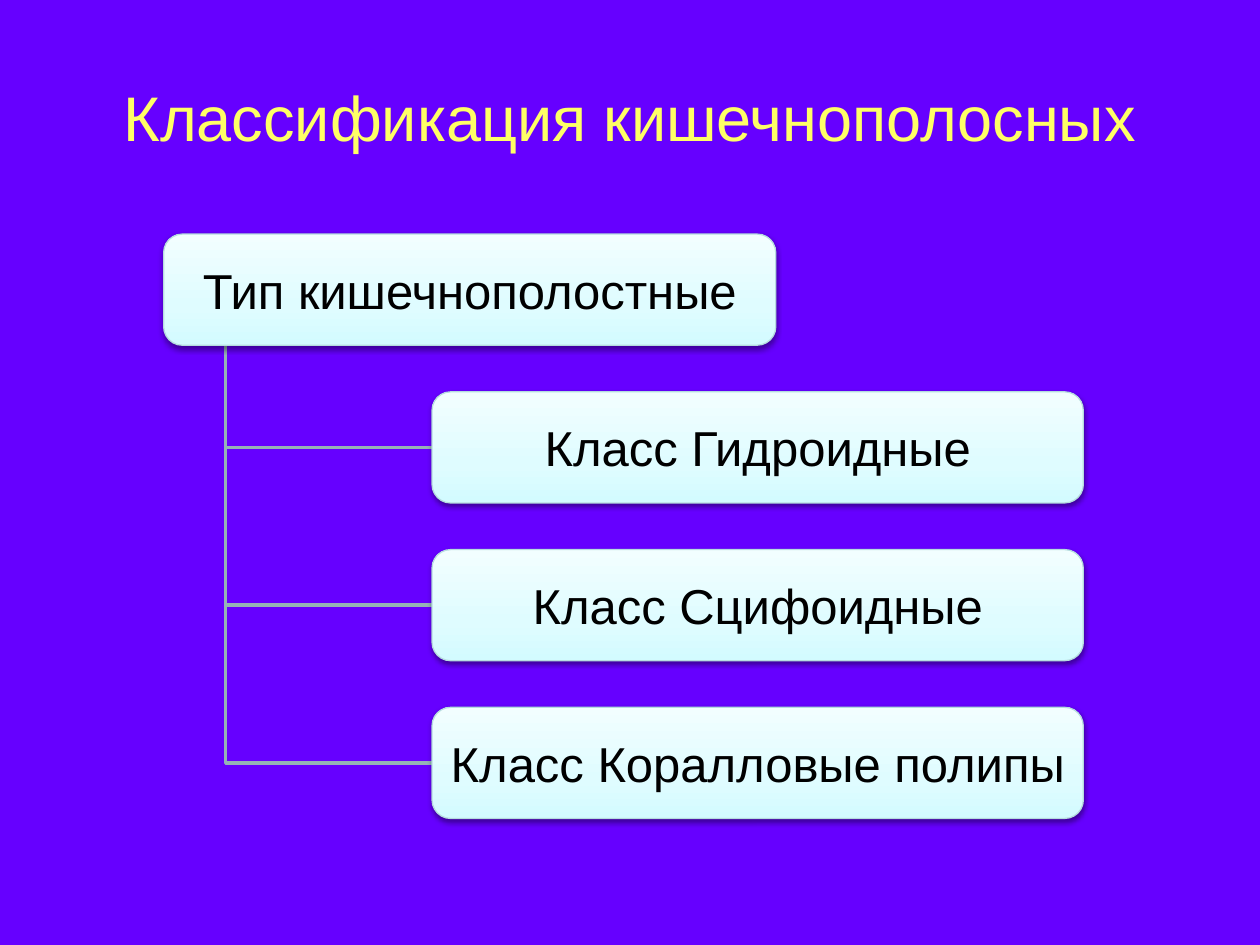
from copy import deepcopy

from pptx import Presentation
from pptx.dml.color import RGBColor
from pptx.enum.shapes import MSO_SHAPE
from pptx.enum.text import MSO_ANCHOR, PP_ALIGN
from pptx.oxml import parse_xml
from pptx.oxml.ns import nsdecls, qn
from pptx.util import Cm, Pt


def color(hex_code):
    return RGBColor.from_string(hex_code)


def write(shape, text, size, hex_code):
    """Set one centred line of text in a shape or placeholder."""
    frame = shape.text_frame
    frame.text = text
    frame.word_wrap = True
    frame.vertical_anchor = MSO_ANCHOR.MIDDLE
    frame.paragraphs[0].alignment = PP_ALIGN.CENTER
    font = frame.paragraphs[0].runs[0].font
    font.name, font.size = "Arial", Pt(size)
    font.color.rgb = color(hex_code)


SHADOW = (
    f'<a:effectLst {nsdecls("a")}>'
    '<a:outerShdw blurRad="40000" dist="20000" dir="5400000" rotWithShape="0">'
    '<a:srgbClr val="000000"><a:alpha val="38000"/></a:srgbClr>'
    '</a:outerShdw></a:effectLst>'
)
GRADIENT = [(0, "D3FBFF"), (0.35, "DFFCFF"), (1, "F2FEFF")]

PHYLUM = "Тип кишечнополостные"
CLASSES = ["Класс Гидроидные", "Класс Сцифоидные", "Класс Коралловые полипы"]
TOP, STEP, BOX_HEIGHT = 4.72, 3.18, 2.24
PHYLUM_LEFT, PHYLUM_WIDTH = 3.3, 12.34
CLASS_LEFT, CLASS_WIDTH = 8.71, 13.13
TRUNK_X = 4.55

prs = Presentation()
prs.slide_width, prs.slide_height = Cm(25.4), Cm(19.05)
slide = prs.slides.add_slide(prs.slide_layouts[5])
slide.background.fill.solid()
slide.background.fill.fore_color.rgb = color("6600FF")

title = slide.shapes.title
title.left, title.top, title.width, title.height = Cm(1.27), Cm(0.76), Cm(22.86), Cm(3.18)
write(title, "Классификация кишечнополосных", 36, "FFFF66")

# Branches from the phylum to each class, longest at the back
for row in range(len(CLASSES), 0, -1):
    branch_y = TOP + row * STEP + BOX_HEIGHT / 2
    builder = slide.shapes.build_freeform(Cm(TRUNK_X), Cm(TOP + BOX_HEIGHT))
    builder.add_line_segments(
        [(Cm(TRUNK_X), Cm(branch_y)), (Cm(CLASS_LEFT), Cm(branch_y))], close=False
    )
    branch = builder.convert_to_shape()
    branch.fill.background()
    branch.line.color.rgb = color("96B3B6")
    branch.line.width = Pt(2)
    branch.shadow.inherit = False

boxes = [(PHYLUM, PHYLUM_LEFT, PHYLUM_WIDTH)]
boxes += [(name, CLASS_LEFT, CLASS_WIDTH) for name in CLASSES]
for row, (name, left, width) in enumerate(boxes):
    box = slide.shapes.add_shape(
        MSO_SHAPE.ROUNDED_RECTANGLE,
        Cm(left), Cm(TOP + row * STEP), Cm(width), Cm(BOX_HEIGHT),
    )
    box.fill.gradient()
    box.fill.gradient_angle = 90
    properties = box._element.spPr
    first_stop = properties.find(".//" + qn("a:gs"))
    first_stop.addnext(deepcopy(first_stop))
    for stop, (position, hex_code) in zip(box.fill.gradient_stops, GRADIENT):
        stop.position = position
        stop.color.rgb = color(hex_code)
    box.line.color.rgb = color("B6DCDF")
    box.line.width = Pt(0.75)
    properties.append(parse_xml(SHADOW))

    frame = box.text_frame
    frame.margin_left = frame.margin_right = Cm(0.16)
    frame.margin_top = frame.margin_bottom = Cm(0.16)
    write(box, name, 28, "000000")

prs.save("out.pptx")
